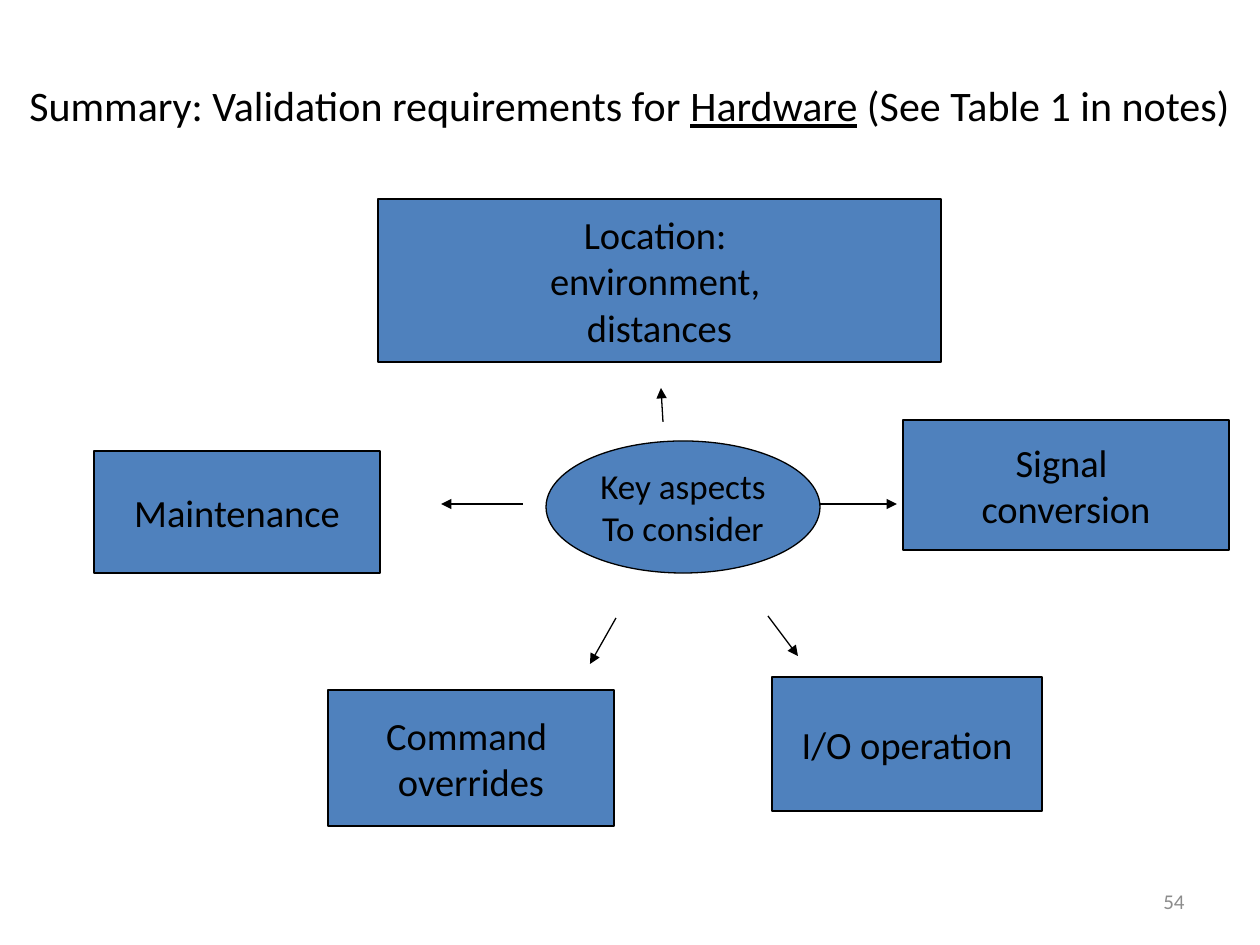
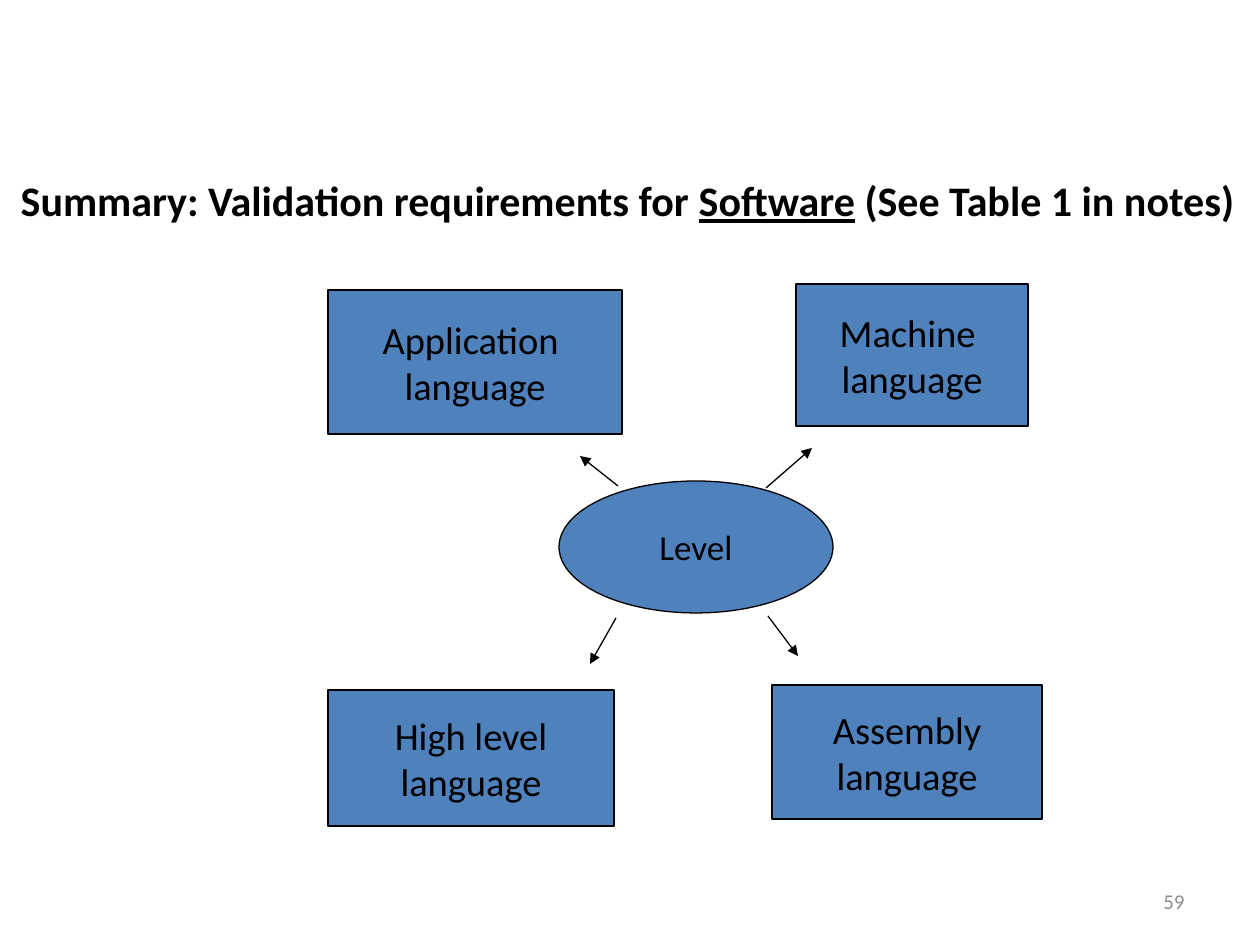
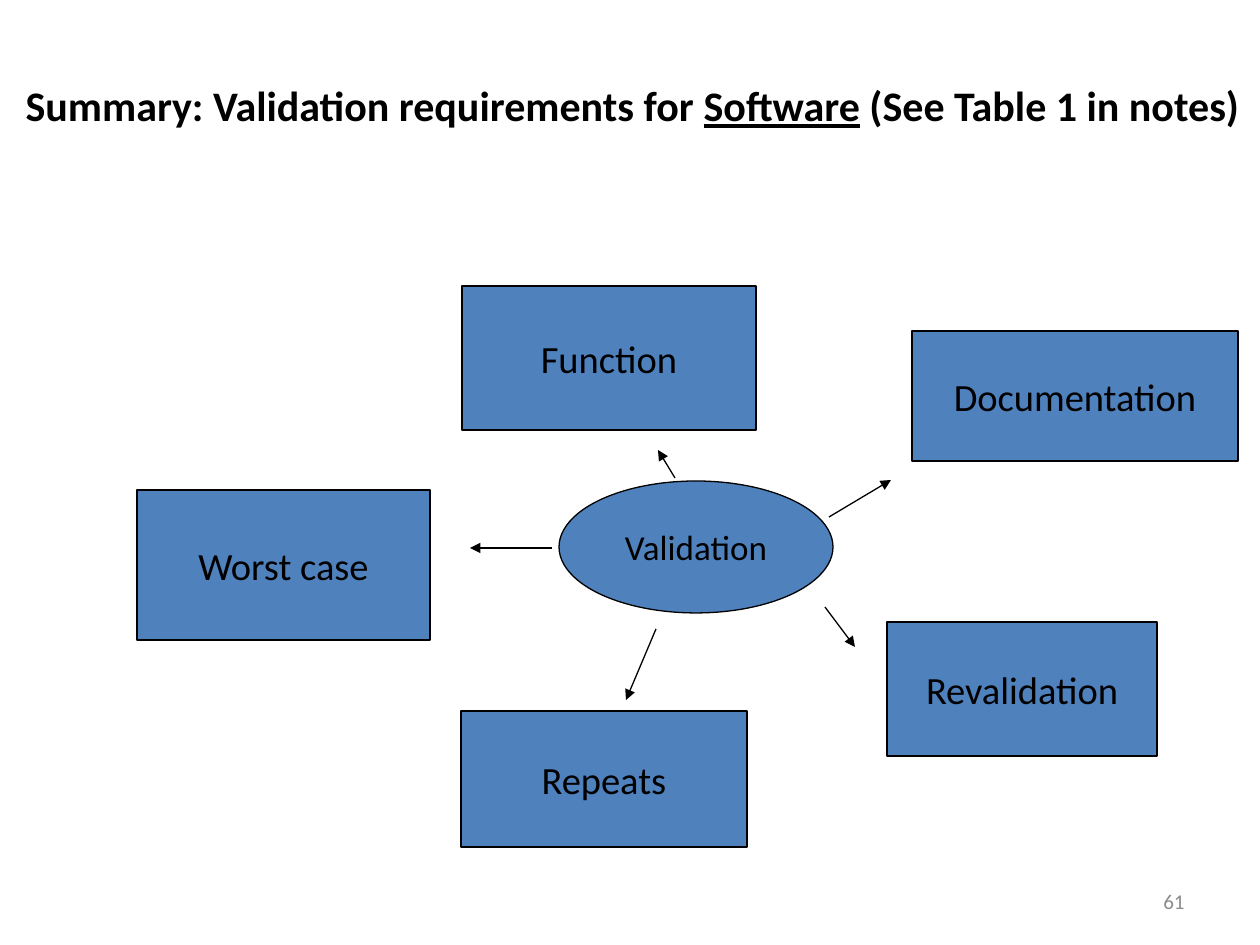
from lxml import etree
from pptx import Presentation
from pptx.dml.color import RGBColor
from pptx.enum.shapes import MSO_CONNECTOR, MSO_SHAPE
from pptx.enum.text import MSO_ANCHOR, MSO_AUTO_SIZE, PP_ALIGN
from pptx.oxml.ns import qn
from pptx.util import Inches, Pt

RECT, OVAL = MSO_SHAPE.RECTANGLE, MSO_SHAPE.OVAL
STRAIGHT = MSO_CONNECTOR.STRAIGHT
TOP, MIDDLE = MSO_ANCHOR.TOP, MSO_ANCHOR.MIDDLE
CENTER, RIGHT = PP_ALIGN.CENTER, PP_ALIGN.RIGHT
NO_FIT = MSO_AUTO_SIZE.NONE

BLUE = RGBColor(0x4F, 0x81, 0xBD)
BLACK = RGBColor(0, 0, 0)
GRAY = RGBColor(0x8C, 0x8C, 0x8C)
FONT = "Calibri"
LINE_WIDTH = Pt(0.75)
TITLE_ONLY = 5
HUB_SIZE = (274, 132)
NUMBER_BOX = (903, 876, 294, 50)

# Arrows below the hub, shared by two diagrams
LOWER_ARROWS = [(616, 618, 590, 664), (768, 616, 798, 656)]

# Each diagram: title subject, weight and place; hub; boxes; arrows; number
HARDWARE = dict(
    subject="Hardware", bold=False, title_at=(-63, 73, 1385, 63),
    hub=("Key aspects\nTo consider", 546, 441),
    boxes=[
        ("Command \noverrides", 328, 690, 286, 136),
        ("Maintenance", 94, 451, 286, 122),
        ("Signal \nconversion", 903, 420, 326, 130),
        ("I/O operation", 772, 677, 270, 134),
        ("Location: \nenvironment, \ndistances", 378, 199, 563, 163),
    ],
    arrows=LOWER_ARROWS + [
        (820, 504, 897, 504), (523, 504, 441, 504), (663, 422, 661, 388)],
    number=54)

LANGUAGE_LEVELS = dict(
    subject="Software", bold=True, title_at=(-15, 168, 1285, 63),
    hub=("Level", 559, 481),
    boxes=[
        ("High level\nlanguage", 328, 690, 286, 136),
        ("Assembly\nlanguage", 772, 685, 270, 134),
        ("Application \nlanguage", 328, 290, 294, 144),
        ("Machine \nlanguage", 796, 284, 232, 142),
    ],
    arrows=LOWER_ARROWS + [(766, 488, 812, 448), (618, 486, 580, 456)],
    number=59)

VALIDATION = dict(
    subject="Software", bold=True, title_at=(-10, 73, 1285, 63),
    hub=("Validation", 559, 481),
    boxes=[
        ("Repeats", 461, 711, 286, 136),
        ("Worst case", 137, 490, 293, 150),
        ("Documentation", 912, 331, 326, 130),
        ("Revalidation", 887, 622, 270, 134),
        ("Function", 462, 286, 294, 144),
    ],
    arrows=[
        (552, 548, 470, 548), (825, 607, 855, 647), (829, 517, 891, 480),
        (675, 478, 658, 450), (656, 629, 626, 700)],
    number=61)


def px(*values):
    """Turn px into EMU, at 126 px to the inch."""
    return [round(v * Inches(1) / 126) for v in values]


def style_text(tf, size, color=BLACK, align=CENTER, bold=False):
    for p in tf.paragraphs:
        p.alignment = align
        for r in p.runs:
            r.font.name = FONT
            r.font.size = Pt(size)
            r.font.bold = bold
            r.font.color.rgb = color


def add_title(s, subject, bold, at):
    sp = s.shapes.title
    sp.left, sp.top, sp.width, sp.height = px(*at)
    tf = sp.text_frame
    tf.auto_size = NO_FIT
    tf.word_wrap = True
    tf.vertical_anchor = TOP
    p = tf.paragraphs[0]
    for text in ("Summary: Validation requirements for ", subject,
                 " (See Table 1 in notes)"):
        r = p.add_run()
        r.text = text
        r.font.underline = text == subject
    style_text(tf, 24, bold=bold)


def add_node(s, kind, text, size, *at):
    sp = s.shapes.add_shape(kind, *px(*at))
    sp.shadow.inherit = False
    sp.fill.solid()
    sp.fill.fore_color.rgb = BLUE
    sp.line.color.rgb = BLACK
    sp.line.width = LINE_WIDTH
    tf = sp.text_frame
    tf.word_wrap = False
    tf.vertical_anchor = MIDDLE
    tf.text = text
    style_text(tf, size)


def add_arrow(s, *ends):
    line = s.shapes.add_connector(STRAIGHT, *px(*ends))
    line.line.color.rgb = BLACK
    line.line.width = LINE_WIDTH
    sp_pr = line.line._get_or_add_ln().getparent()
    etree.SubElement(sp_pr.find(qn("a:ln")), qn("a:tailEnd"), type="triangle")
    etree.SubElement(sp_pr, qn("a:effectLst"))


def add_number(s, number):
    tf = s.shapes.add_textbox(*px(*NUMBER_BOX)).text_frame
    tf.word_wrap = True
    tf.vertical_anchor = MIDDLE
    tf.text = str(number)
    style_text(tf, 12, GRAY, RIGHT)


def add_diagram(prs, subject, bold, title_at, hub, boxes, arrows, number):
    s = prs.slides.add_slide(prs.slide_layouts[TITLE_ONLY])
    add_title(s, subject, bold, title_at)
    text, left, top = hub
    add_node(s, OVAL, text, 20, left, top, *HUB_SIZE)
    for text, *at in boxes:
        add_node(s, RECT, text, 22, *at)
    for ends in arrows:
        add_arrow(s, *ends)
    add_number(s, number)


def main():
    prs = Presentation()
    prs.slide_width, prs.slide_height = px(1260, 945)
    for diagram in (HARDWARE, LANGUAGE_LEVELS, VALIDATION):
        add_diagram(prs, **diagram)
    prs.save("out.pptx")


if __name__ == "__main__":
    main()
